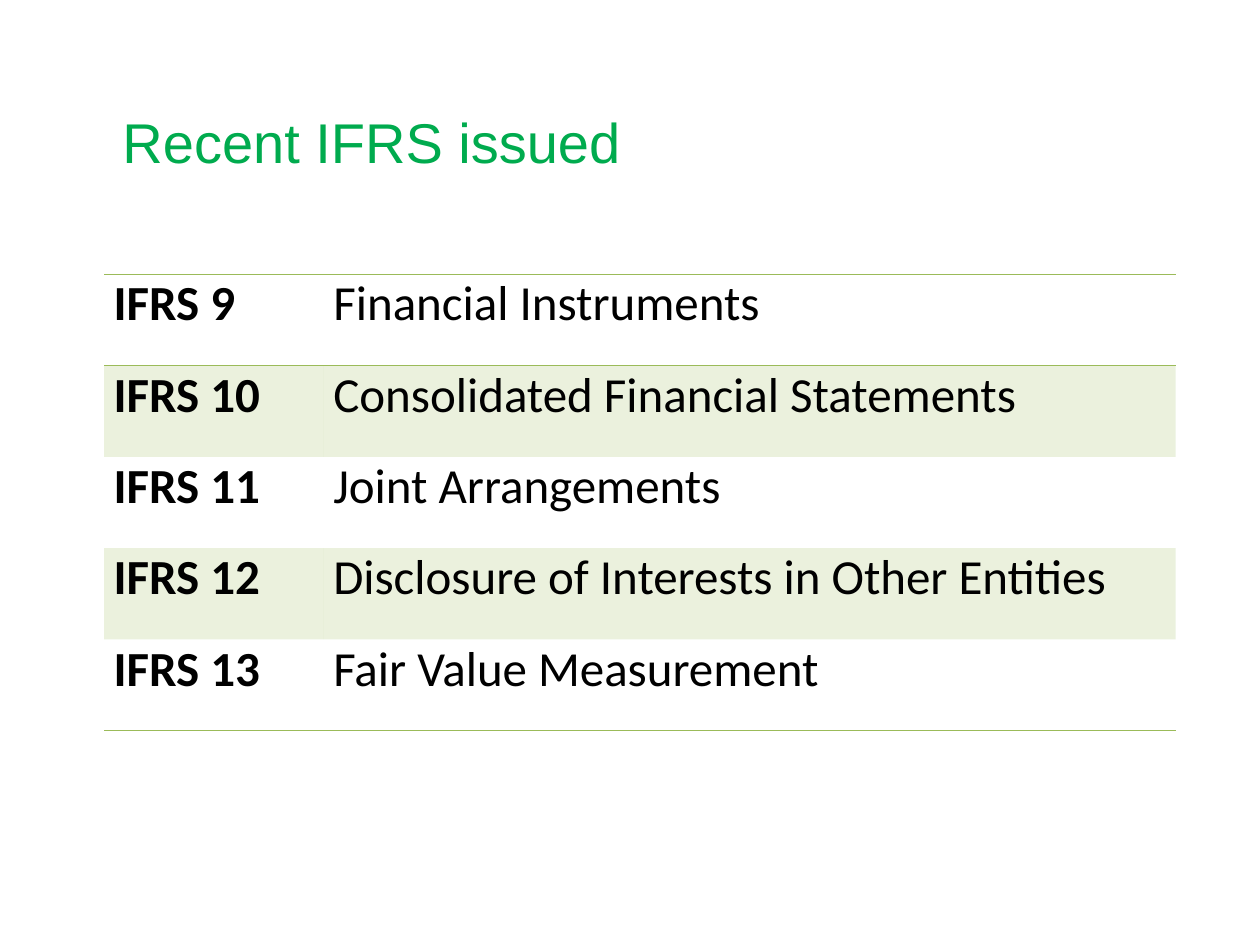
from lxml.etree import SubElement
from pptx import Presentation
from pptx.dml.color import RGBColor
from pptx.enum.text import MSO_ANCHOR
from pptx.oxml.ns import qn
from pptx.util import Cm, Pt

GREEN = RGBColor(0x00, 0xAB, 0x4E)
OLIVE = RGBColor(0x9B, 0xBB, 0x59)
BLACK = RGBColor(0x00, 0x00, 0x00)
PLAIN_STYLE = "{2D5ABB26-0587-4C30-8999-92F81FD0307C}"

STANDARDS = [
    ("IFRS 9", "Financial Instruments"),
    ("IFRS 10", "Consolidated Financial Statements"),
    ("IFRS 11", "Joint Arrangements"),
    ("IFRS 12", "Disclosure of Interests in Other Entities"),
    ("IFRS 13", "Fair Value Measurement"),
]


class SlideBuilder:
    title_font, body_font = "Arial", "Calibri"
    title_size, body_size = Pt(32), Pt(28)

    def __init__(self, slide):
        self.slide = slide

    def set_text(self, frame, text, font_name, size, color, bold=False):
        frame.text = text
        font = frame.paragraphs[0].runs[0].font
        font.name, font.size, font.bold = font_name, size, bold
        font.color.rgb = color

    def title(self, text, left, top, width, height):
        frame = self.slide.shapes.add_textbox(left, top, width, height).text_frame
        frame.word_wrap = True
        frame.vertical_anchor = MSO_ANCHOR.MIDDLE
        self.set_text(frame, text, self.title_font, self.title_size, GREEN)

    def rule(self, cell, side):
        line = SubElement(cell._tc.get_or_add_tcPr(), qn(f"a:{side}"), w=str(Pt(1)))
        fill = SubElement(line, qn("a:solidFill"))
        SubElement(fill, qn("a:srgbClr"), val=str(OLIVE))

    def shade(self, cell, opacity):
        cell.fill.solid()
        cell.fill.fore_color.rgb = OLIVE
        color = cell._tc.tcPr.find(f"{qn('a:solidFill')}/{qn('a:srgbClr')}")
        SubElement(color, qn("a:alpha"), val=str(opacity * 1000))

    def table(self, rows, left, top, widths, row_height):
        frame = self.slide.shapes.add_table(
            len(rows), len(widths), left, top, sum(widths), row_height * len(rows))
        table = frame.table
        table._tbl.tblPr.find(qn("a:tableStyleId")).text = PLAIN_STYLE
        table.first_row = table.horz_banding = False
        for column, width in zip(table.columns, widths):
            column.width = width
        for r, texts in enumerate(rows):
            table.rows[r].height = row_height
            for c, text in enumerate(texts):
                cell = table.cell(r, c)
                cell.margin_left = cell.margin_right = Cm(0.19)
                cell.margin_top = cell.margin_bottom = 0
                self.set_text(cell.text_frame, text, self.body_font,
                              self.body_size, BLACK, bold=c == 0)
                # Rules around the first row and under the last
                if r == 0:
                    self.rule(cell, "lnT")
                if r in (0, len(rows) - 1):
                    self.rule(cell, "lnB")
                # Every second row is tinted
                if r % 2:
                    self.shade(cell, 20)
                else:
                    cell.fill.background()


def main():
    deck = Presentation()
    deck.slide_width, deck.slide_height = Cm(25.4), Cm(19.05)
    builder = SlideBuilder(deck.slides.add_slide(deck.slide_layouts[6]))

    # Standards and their names
    builder.table(STANDARDS, Cm(2.1), Cm(5.53), [Cm(4.43), Cm(17.17)], Cm(1.84))

    # Heading
    builder.title("Recent IFRS issued", Cm(2.22), Cm(0.8), Cm(22.86), Cm(4.11))

    deck.save("out.pptx")


if __name__ == "__main__":
    main()
